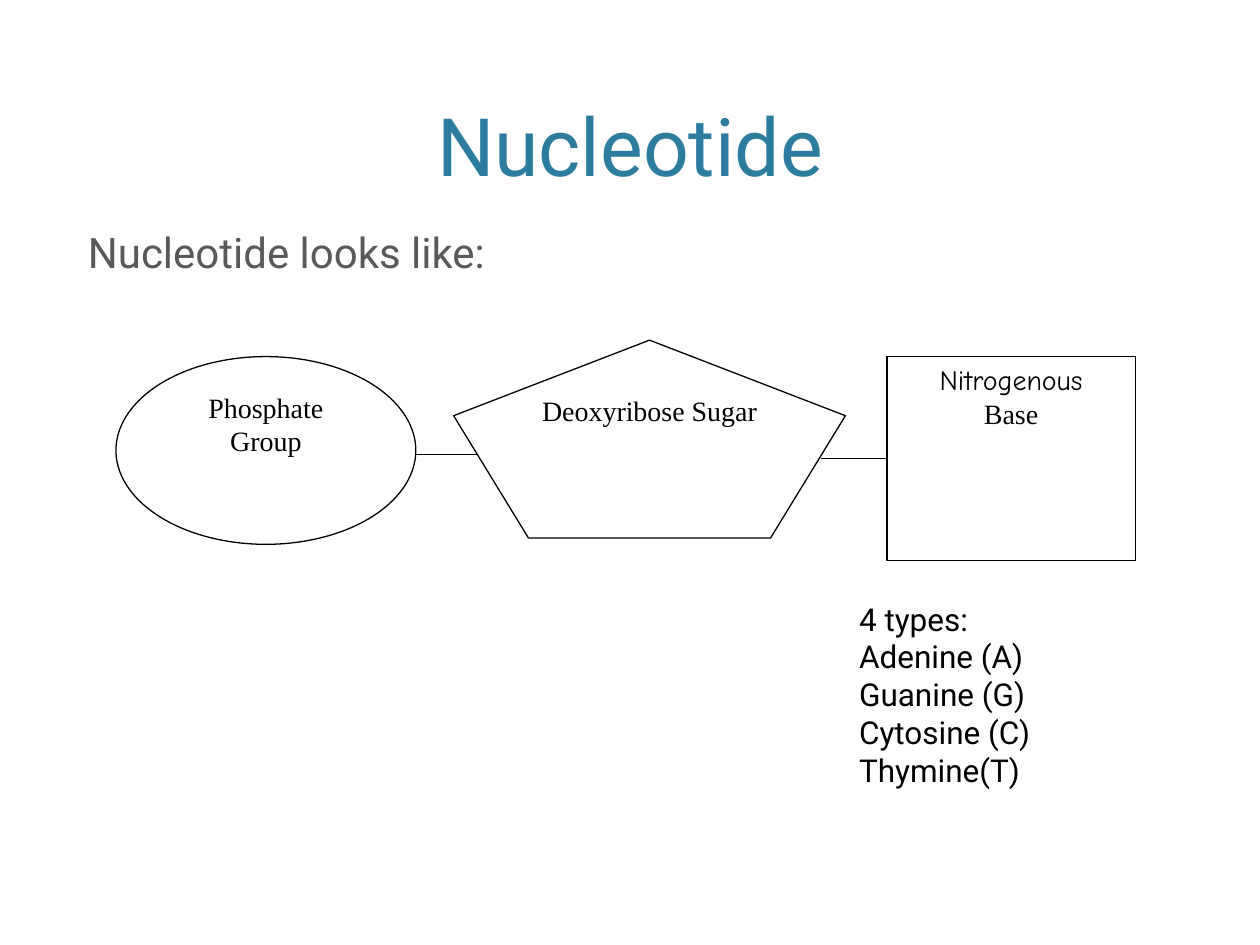
from lxml.etree import SubElement
from pptx import Presentation
from pptx.dml.color import RGBColor
from pptx.enum.shapes import MSO_CONNECTOR, MSO_SHAPE
from pptx.enum.text import MSO_ANCHOR, PP_ALIGN
from pptx.oxml.ns import qn
from pptx.util import Inches, Pt

# The slide is a grid of 100 columns by 75 rows, each cell 0.1 inch square
COLUMNS, ROWS = 100, 75
CELL = Inches(0.1)
BLACK, WHITE = "000000", "FFFFFF"
OUTLINE = 0.75
SERIF = "Times New Roman"


def color(value):
    return RGBColor.from_string(value)


def cells(*values):
    return [round(value * CELL) for value in values]


def set_values(target, values):
    for name, value in values.items():
        setattr(target, name, value)


def write(shape, lines, size, font="Roboto", ink=BLACK,
          align=PP_ALIGN.LEFT, anchor=MSO_ANCHOR.TOP):
    """Fill a shape with lines, each a string or a (string, font) pair."""
    frame = shape.text_frame
    set_values(frame, {"word_wrap": True, "vertical_anchor": anchor})
    for index, line in enumerate(lines):
        text, name = line if isinstance(line, tuple) else (line, font)
        paragraph = frame.add_paragraph() if index else frame.paragraphs[0]
        paragraph.alignment = align
        run = paragraph.add_run()
        run.text = text
        set_values(run.font, {"name": name, "size": Pt(size)})
        run.font.color.rgb = color(ink)


def add_title(slide, box):
    title = slide.shapes.title
    set_values(title, dict(zip(("left", "top", "width", "height"), cells(*box))))
    write(title, ["Nucleotide"], 46, ink="2C7C9F",
          align=PP_ALIGN.CENTER, anchor=MSO_ANCHOR.BOTTOM)


def add_text(slide, box, lines, size, ink=BLACK):
    write(slide.shapes.add_textbox(*cells(*box)), lines, size, ink=ink)


def add_bond(slide, left, top, length):
    bond = slide.shapes.add_connector(
        MSO_CONNECTOR.STRAIGHT, *cells(left, top, left + length, top))
    bond.line.color.rgb = color(BLACK)
    bond.line.width = Pt(OUTLINE)
    SubElement(bond._element.spPr, qn("a:effectLst"))


def add_part(slide, kind, box, lines):
    part = slide.shapes.add_shape(kind, *cells(*box))
    part.shadow.inherit = False
    part.fill.solid()
    part.fill.fore_color.rgb = color(WHITE)
    part.line.color.rgb = color(BLACK)
    part.line.width = Pt(OUTLINE)
    write(part, lines, 16, SERIF, align=PP_ALIGN.CENTER)


def add_nucleotide(slide, left, top):
    """Draw the molecule; offsets are in cells from its top left corner."""
    # Bonds lie behind the parts they join
    for x, y in ((23.8, 9.1), (56, 9.4)):
        add_bond(slide, left + x, top + y, 5.1)

    parts = (
        (MSO_SHAPE.OVAL, (0, 1.3, 23.8, 14.9), ["Phosphate Group"]),
        (MSO_SHAPE.REGULAR_PENTAGON, (26.8, 0, 31.1, 15.7), ["Deoxyribose Sugar"]),
        (MSO_SHAPE.RECTANGLE, (61.2, 1.3, 19.7, 16.2),
         [("Nitrogenous", "Comic Neue"), "Base"]),
    )
    for kind, (x, y, width, height), lines in parts:
        add_part(slide, kind, (left + x, top + y, width, height), lines)


def main():
    presentation = Presentation()
    set_values(presentation, {"slide_width": COLUMNS * CELL,
                              "slide_height": ROWS * CELL})
    slide = presentation.slides.add_slide(presentation.slide_layouts[5])

    # Heading and introduction share the same side margins
    margin = 6
    width = COLUMNS - 2 * margin
    add_title(slide, (margin, 1.2, width, 14.6))
    add_text(slide, (margin, 17.5, width, 47.5),
             ["Nucleotide looks like:"], 24, "595959")

    # Molecule, with the list of bases under its last part
    add_nucleotide(slide, 9.2, 27)
    add_text(slide, (67.2, 47.1, 26.7, 17.9),
             ["4 types:", "Adenine (A)", "Guanine (G)",
              "Cytosine (C)", "Thymine(T)"], 18)

    presentation.save("out.pptx")


if __name__ == "__main__":
    main()
